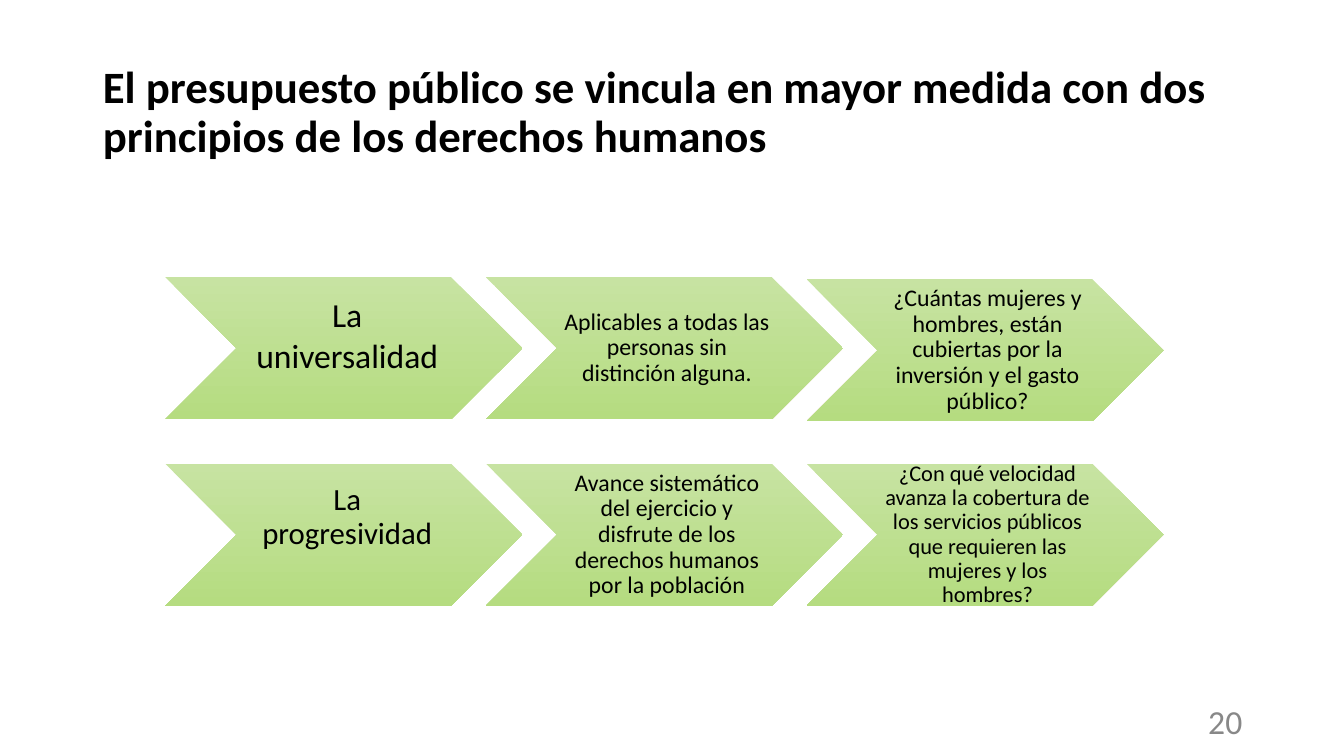
from dataclasses import dataclass

from pptx import Presentation
from pptx.dml.color import RGBColor
from pptx.enum.shapes import MSO_SHAPE
from pptx.enum.text import MSO_ANCHOR, MSO_AUTO_SIZE, PP_ALIGN
from pptx.util import Inches, Pt

CHEVRON = MSO_SHAPE.CHEVRON
MIDDLE = MSO_ANCHOR.MIDDLE
NO_FIT = MSO_AUTO_SIZE.NONE
LEFT, CENTER, RIGHT = PP_ALIGN.LEFT, PP_ALIGN.CENTER, PP_ALIGN.RIGHT


@dataclass(frozen=True)
class Theme:
    font: str = "Calibri"
    ink: str = "000000"
    muted: str = "888888"
    green_top: str = "C7E3A2"
    green_bottom: str = "B5DC80"
    title: int = 32
    number: int = 24
    principle: int = 24
    principle_small: int = 22
    detail: int = 17
    detail_small: int = 16


@dataclass(frozen=True)
class Step:
    text: str
    size: int
    insets: tuple[float, float, float, float] = (0.07, 0.02, 0.02, 0.02)
    spacing: float = 0.9
    drop: float = 0


THEME = Theme()
CHEVRON_LEFT, CHEVRON_TOP = 1.64, 2.75
CHEVRON_WIDTH, CHEVRON_HEIGHT = 3.54, 1.41
COLUMN_PITCH, ROW_PITCH = 3.18, 1.85

ROWS = [
    [
        Step("La universalidad", THEME.principle, (0.1, 0.03, 0.03, 0.3), 1.0),
        Step("Aplicables a todas las personas sin distinción alguna.", THEME.detail),
        Step("¿Cuántas mujeres y hombres, están cubiertas por la inversión "
             "y el gasto público?", THEME.detail, drop=0.02),
    ],
    [
        Step("La progresividad", THEME.principle_small, (0.1, 0.03, 0.03, 0.37)),
        Step("Avance sistemático del ejercicio y disfrute de los derechos "
             "humanos por la población", THEME.detail),
        Step("¿Con qué velocidad avanza la cobertura de los servicios públicos "
             "que requieren las mujeres y los hombres?", THEME.detail_small),
    ],
]


def write(shape, text: str, size: int, color: str, align, *,
          insets: tuple[float, float, float, float] = (0.1, 0.05, 0.1, 0.05),
          spacing: float = 1.0, bold: bool = False) -> None:
    tf = shape.text_frame
    left, top, right, bottom = map(Inches, insets)
    frame = {
        "word_wrap": True, "auto_size": NO_FIT, "vertical_anchor": MIDDLE,
        "margin_left": left, "margin_top": top,
        "margin_right": right, "margin_bottom": bottom,
    }
    for name, value in frame.items():
        setattr(tf, name, value)
    p = tf.paragraphs[0]
    p.alignment = align
    p.line_spacing = spacing
    r = p.add_run()
    r.text = text
    for name, value in {"name": THEME.font, "size": Pt(size), "bold": bold}.items():
        setattr(r.font, name, value)
    r.font.color.rgb = RGBColor.from_string(color)


def draw_step(s, step: Step, row: int, column: int) -> None:
    sp = s.shapes.add_shape(
        CHEVRON,
        Inches(CHEVRON_LEFT + column * COLUMN_PITCH),
        Inches(CHEVRON_TOP + row * ROW_PITCH + step.drop),
        Inches(CHEVRON_WIDTH), Inches(CHEVRON_HEIGHT),
    )
    sp.shadow.inherit = False
    sp.line.fill.background()
    sp.fill.gradient()
    sp.fill.gradient_angle = 270
    for stop, color in zip(sp.fill.gradient_stops,
                           (THEME.green_top, THEME.green_bottom)):
        stop.color.rgb = RGBColor.from_string(color)
    write(sp, step.text, step.size, THEME.ink, CENTER,
          insets=step.insets, spacing=step.spacing)


def main() -> None:
    prs = Presentation()
    prs.slide_width, prs.slide_height = Inches(13.33), Inches(7.5)
    s = prs.slides.add_slide(prs.slide_layouts[5])

    title = s.shapes.title
    place = {"left": 0.92, "top": 0.4, "width": 11.5, "height": 1.45}
    for name, value in place.items():
        setattr(title, name, Inches(value))
    write(title, "El presupuesto público se vincula en mayor medida con dos "
          "principios de los derechos humanos", THEME.title, THEME.ink, LEFT,
          spacing=0.9, bold=True)

    number = s.shapes.add_textbox(Inches(9.42), Inches(6.95), Inches(3), Inches(0.4))
    write(number, "20", THEME.number, THEME.muted, RIGHT)

    for row, steps in enumerate(ROWS):
        for column, step in enumerate(steps):
            draw_step(s, step, row, column)

    prs.save("out.pptx")


if __name__ == "__main__":
    main()
